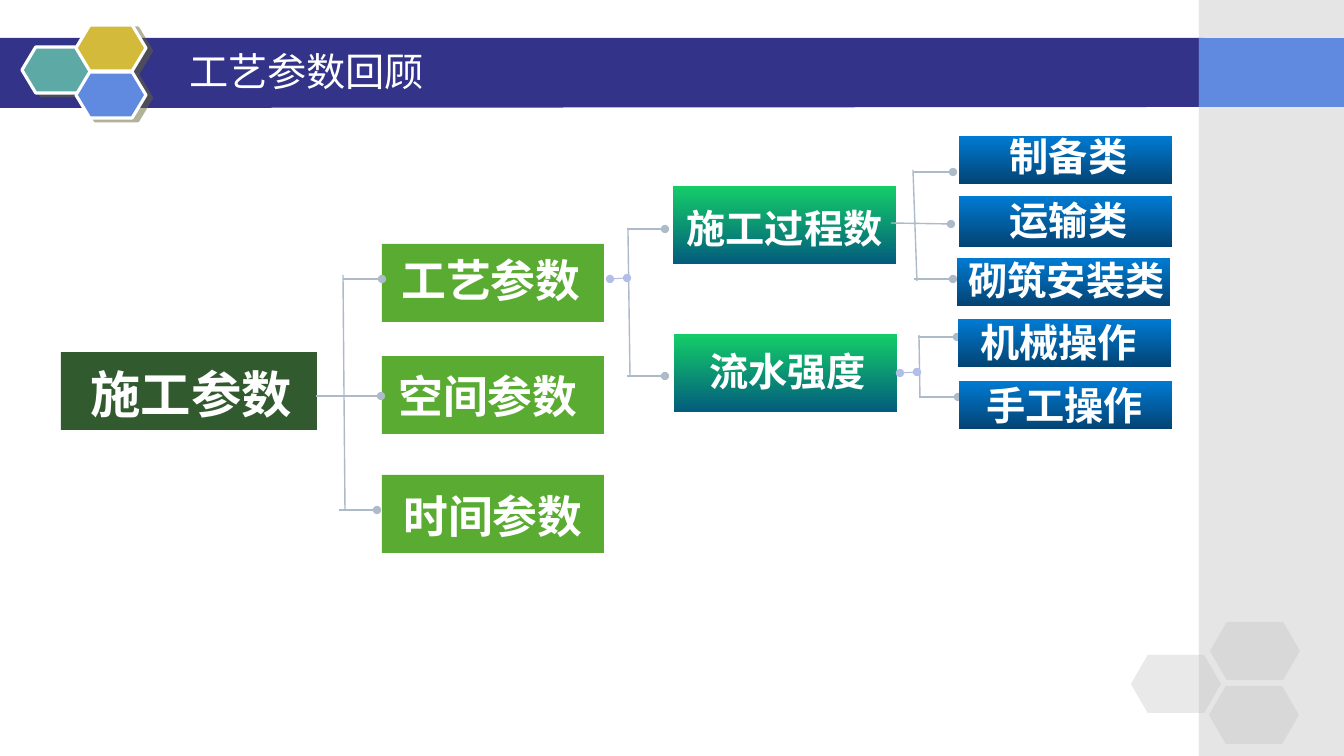
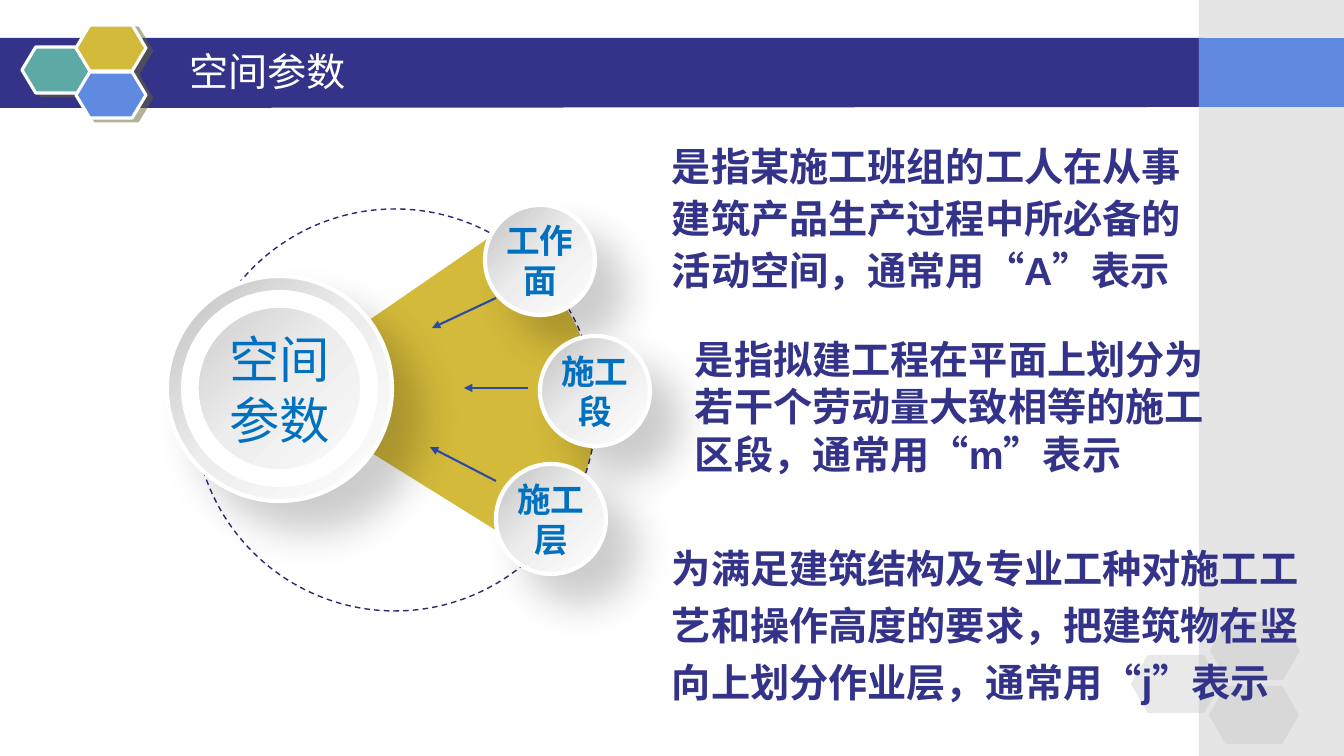
import pptx
import pptx.dml.color
import pptx.enum.dml
import pptx.enum.shapes
import pptx.enum.text
import pptx.oxml.ns
import pptx.util
from lxml import etree

PX = 914400 / 100.8
WIDTH, HEIGHT = 1344, 756
CJK = "Noto Sans CJK SC"
LINE_HEIGHT = 1.21

COLORS = {
    "band": "333389", "band_end": "5F8ADF", "silver": "C0C0C0",
    "teal": "5DA9A5", "gold": "D4BA3A", "olive": "666633",
    "white": "FFFFFF", "black": "000000", "pearl": "EDEDED",
    "root": "315B2F", "branch": "5AAB31",
    "emerald": "14CD68", "petrol": "035C7D",
    "azure": "007BD3", "navy": "034373",
    "connector": "ADBACA", "link": "B1BFE8",
    "arrow": "2B4BA6", "orbit": "2A2A74", "label": "0070C0",
}
SHAPE = pptx.enum.shapes.MSO_SHAPE
ALIGN = pptx.enum.text.PP_ALIGN
MIDDLE = pptx.enum.text.MSO_ANCHOR.MIDDLE
qn = pptx.oxml.ns.qn


def px(*lengths):
    return [pptx.util.Emu(round(n * PX)) for n in lengths]


def rgb(name):
    return pptx.dml.color.RGBColor.from_string(COLORS[name])


def sub(parent, tag, **attributes):
    return etree.SubElement(parent, qn(tag), {k: str(v) for k, v in attributes.items()})


def paint(shape, fill=None, alpha=100, line=None, line_pt=1):
    """Fill with a colour name, a list of (percent, name) with an angle, or nothing."""
    shape.shadow.inherit = False
    if fill is None:
        shape.fill.background()
    elif isinstance(fill, str):
        shape.fill.solid()
        shape.fill.fore_color.rgb = rgb(fill)
        if alpha < 100:
            color = shape.element.spPr.find(".//" + qn("a:srgbClr"))
            sub(color, "a:alpha", val=alpha * 1000)
    else:
        stops, angle = fill
        shape.fill.gradient()
        gradient = shape.element.spPr.find(qn("a:gradFill"))
        for child in list(gradient):
            gradient.remove(child)
        stop_list = sub(gradient, "a:gsLst")
        for percent, name in stops:
            stop = sub(stop_list, "a:gs", pos=percent * 1000)
            sub(stop, "a:srgbClr", val=COLORS[name])
        sub(gradient, "a:lin", ang=angle * 60000, scaled=0)
    if line:
        shape.line.color.rgb = rgb(line)
        shape.line.width = pptx.util.Pt(line_pt)
    else:
        shape.line.fill.background()
    return shape


def cast_shadow(shape, color, alpha, blur, distance, angle):
    effects = shape.element.spPr.find(qn("a:effectLst"))
    outer = sub(effects, "a:outerShdw", blurRad=pptx.util.Pt(blur),
                dist=pptx.util.Pt(distance), dir=angle * 60000,
                algn="ctr", rotWithShape=0)
    sub(sub(outer, "a:srgbClr", val=COLORS[color]), "a:alpha", val=alpha * 1000)


def add_figure(slide, kind, left, top, width, height, **style):
    return paint(slide.shapes.add_shape(kind, *px(left, top, width, height)), **style)


def add_outline(slide, points, **style):
    start, *rest = [tuple(px(*point)) for point in points]
    builder = slide.shapes.build_freeform(*start)
    builder.add_line_segments(rest, close=True)
    return paint(builder.convert_to_shape(), **style)


def add_line(slide, ends, color, width, head=None, tail=None):
    connector = slide.shapes.add_connector(
        pptx.enum.shapes.MSO_CONNECTOR.STRAIGHT, *px(*ends))
    connector.line.color.rgb = rgb(color)
    connector.line.width = pptx.util.Pt(width)
    stroke = connector.line._get_or_add_ln()
    for tag, end in (("a:headEnd", head), ("a:tailEnd", tail)):
        if end:
            sub(stroke, tag, type=end)
    sub(connector.element.spPr, "a:effectLst")


def write(frame, lines, size, color, font=CJK, bold=False,
          align=ALIGN.CENTER, spacing=1.0):
    frame.word_wrap = True
    frame.text = "\n".join(lines)
    for paragraph in frame.paragraphs:
        paragraph.alignment = align
        paragraph.line_spacing = pptx.util.Pt(round(size * LINE_HEIGHT * spacing, 1))
        paragraph.font.name = font
        paragraph.font.size = pptx.util.Pt(size)
        paragraph.font.bold = bold
        paragraph.font.color.rgb = rgb(color)
        sub(paragraph.font._rPr, "a:ea", typeface=CJK)


def set_insets(frame, left, top, right, bottom):
    (frame.margin_left, frame.margin_top,
     frame.margin_right, frame.margin_bottom) = px(left, top, right, bottom)


def draw_backdrop(slide):
    add_outline(slide, [(-1, 38), (1204, 38), (1203, 107), (-1, 108)], fill="band")
    add_figure(slide, SHAPE.RECTANGLE, 1199, 0, 145, HEIGHT, fill="silver", alpha=40)
    add_figure(slide, SHAPE.RECTANGLE, 1199, 38, 145, 69, fill="band_end")
    for left, top, fill in ((22, 47, "teal"), (76, 25, "gold"), (76, 72, "band_end")):
        cell = add_figure(slide, SHAPE.HEXAGON, left, top, 70, 46,
                          fill=fill, line="white", line_pt=2.25)
        cell.adjustments[0] = 0.3
        cast_shadow(cell, "olive", 50, 0, 4.5, 27)
    for left, top in ((1131, 655), (1210, 622), (1209, 686)):
        cell = add_figure(slide, SHAPE.HEXAGON, left, top, 90, 58, fill="silver", alpha=35)
        cell.adjustments[0] = 0.29


def share_backdrop(slide):
    """Draw the backdrop once and hand it to the layout, so every slide shows it."""
    draw_backdrop(slide)
    tree = slide.slide_layout.shapes._spTree
    drawn = [shape for shape in slide.shapes if not shape.is_placeholder]
    for number, shape in enumerate(drawn, start=100):
        shape.element.find(".//" + qn("p:cNvPr")).set("id", str(number))
        tree.append(shape.element)


def set_title(slide, text):
    title = slide.shapes.title
    title.left, title.top, title.width, title.height = px(179, 42, 975, 58)
    title.text_frame.vertical_anchor = MIDDLE
    title.text_frame.auto_size = pptx.enum.text.MSO_AUTO_SIZE.NONE
    write(title.text_frame, [text], 28, "white", align=ALIGN.LEFT)


GREEN_FADE = ([(0, "emerald"), (100, "petrol")], 90)
BLUE_FADE = ([(0, "azure"), (100, "navy")], 90)

# Level: fill, text size, then nodes as text, box and nudge of the text.
STEMS = [
    ("root", 36, [("施工参数", (1, 222, 256, 78), (2, 2))]),
    ("branch", 32, [("工艺参数", (322, 114, 222, 78), (-2, -4)),
                    ("空间参数", (322, 226, 222, 78), (-5, 0)),
                    ("时间参数", (322, 345, 222, 78), (0, 1))]),
    (GREEN_FADE, 28, [("施工过程数", (613, 56, 223, 78), (0, 3)),
                      ("流水强度", (614, 204, 223, 78), (2, -2))]),
]
LEAVES = [
    (BLUE_FADE, 28, [("制备类", (899, 6, 213, 48), (3, -4)),
                     ("运输类", (899, 66, 213, 51), (3, -2)),
                     ("砌筑安装类", (897, 128, 213, 48), (3, -2)),
                     ("机械操作", (898, 189, 213, 48), (-6, -1)),
                     ("手工操作", (899, 251, 213, 48), (-1, 0))]),
]
TRUNKS = [(283, 145, 285, 379), (568, 100, 570, 246),
          (853, 40, 857, 151), (859, 205, 860, 267)]
TWIGS = [(256, 266, 321, 266), (283, 149, 322, 149), (279, 380, 317, 380),
         (567, 99, 605, 99), (567, 246, 605, 246), (831, 93, 891, 94),
         (854, 42, 893, 42), (854, 149, 893, 149),
         (858, 207, 897, 207), (859, 267, 898, 267)]
LINKS = [(567, 148, 550, 149), (857, 242, 840, 243)]


def shift(ends, left, top):
    return [n + offset for n, offset in zip(ends, (left, top, left, top))]


def add_nodes(slide, left, top, levels):
    for fill, size, nodes in levels:
        for text, (x, y, width, height), (dx, dy) in nodes:
            node = add_figure(slide, SHAPE.RECTANGLE, left + x, top + y,
                              width, height, fill=fill)
            frame = node.text_frame
            frame.vertical_anchor = MIDDLE
            set_insets(frame, max(0, 2 * dx), max(0, 2 * dy),
                       max(0, -2 * dx), max(0, -2 * dy))
            write(frame, [text], size, "white", "Times New Roman", bold=True)


def add_parameter_tree(slide, left, top):
    add_nodes(slide, left, top, STEMS)
    for ends in TRUNKS:
        add_line(slide, shift(ends, left, top), "connector", 1)
    for ends in TWIGS:
        add_line(slide, shift(ends, left, top), "connector", 1, tail="oval")
    for ends in LINKS:
        add_line(slide, shift(ends, left, top), "link", 0.75, head="oval", tail="oval")
    add_nodes(slide, left, top, LEAVES)


def bezier(start, control_1, control_2, end, steps=12):
    """Points along a cubic curve, without its start."""
    points = []
    for step in range(1, steps + 1):
        t = step / steps
        weights = ((1 - t) ** 3, 3 * t * (1 - t) ** 2, 3 * t * t * (1 - t), t ** 3)
        points.append(tuple(
            sum(w * p[axis] for w, p in zip(weights, (start, control_1, control_2, end)))
            for axis in (0, 1)))
    return points


def add_ball(slide, left, top, diameter, lines, size, bold):
    ball = add_figure(
        slide, SHAPE.OVAL, left, top, diameter, diameter,
        fill=([(0, "silver"), (49, "pearl"), (100, "white")], 45),
        line="white", line_pt=3)
    cast_shadow(ball, "black", 20, 29, 29, 45)
    ball.text_frame.vertical_anchor = MIDDLE
    set_insets(ball.text_frame, 0, 5, 0, 5)
    write(ball.text_frame, lines, size, "label", bold=bold)


def add_radial(slide, left, top):
    shoulder, tip, foot, rim = (406, 108), (109, 189), (374, 354), (435, 207)
    wedge = [shoulder, *bezier(shoulder, (375, 65), (382, 68), (333, 35)), tip, foot,
             *bezier(foot, (439, 276), (432, 247), rim),
             *bezier(rim, (433, 174), (426, 138), shoulder)]
    add_outline(slide, [(left + x, top + y) for x, y in wedge], fill="gold")
    orbit = add_figure(slide, SHAPE.OVAL, left + 34, top + 9, 402, 402, line="orbit")
    orbit.line.dash_style = pptx.enum.dml.MSO_LINE.DASH
    for ends in ((336, 281, 270, 247), (368, 188, 304, 188), (336, 98, 272, 128)):
        add_line(slide, shift(ends, left, top), "arrow", 1.5, tail="triangle")
    for text, x, y in (("工作面", 325, 5), ("施工段", 380, 136), ("施工层", 336, 264)):
        add_ball(slide, left + x, top + y, 110, [text], 24, True)
    add_ball(slide, left + 7, top + 76, 225, ["空间", "参数"], 36, False)
    ring = add_figure(slide, SHAPE.DONUT, left + 21, top + 90, 197, 197, fill="white")
    ring.adjustments[0] = 0.09


def add_definition(slide, left, top, width, height, text, spacing):
    definition = slide.shapes.add_textbox(*px(left, top, width, height))
    write(definition.text_frame, [text], 28, "band", "Arial", True, ALIGN.LEFT, spacing)


DEFINITIONS = [
    ((662, 132, 560, 166), 1.1,
     "是指某施工班组的工人在从事建筑产品生产过程中所必备的活动空间，通常用“A”表示"),
    ((685, 330, 540, 152), 1.0,
     "是指拟建工程在平面上划分为若干个劳动量大致相等的施工区段，通常用“m”表示"),
    ((662, 529, 650, 180), 1.2,
     "为满足建筑结构及专业工种对施工工艺和操作高度的要求，把建筑物在竖向上划分作业层，通常用“j”表示"),
]


def main():
    deck = pptx.Presentation()
    deck.slide_width, deck.slide_height = px(WIDTH, HEIGHT)
    title_only = deck.slide_layouts[5]

    review = deck.slides.add_slide(title_only)
    share_backdrop(review)
    set_title(review, "工艺参数回顾")
    add_parameter_tree(review, 60, 130)

    space = deck.slides.add_slide(title_only)
    set_title(space, "空间参数")
    add_radial(space, 160, 200)
    for box, spacing, text in DEFINITIONS:
        add_definition(space, *box, text, spacing)

    deck.save("out.pptx")


if __name__ == "__main__":
    main()
